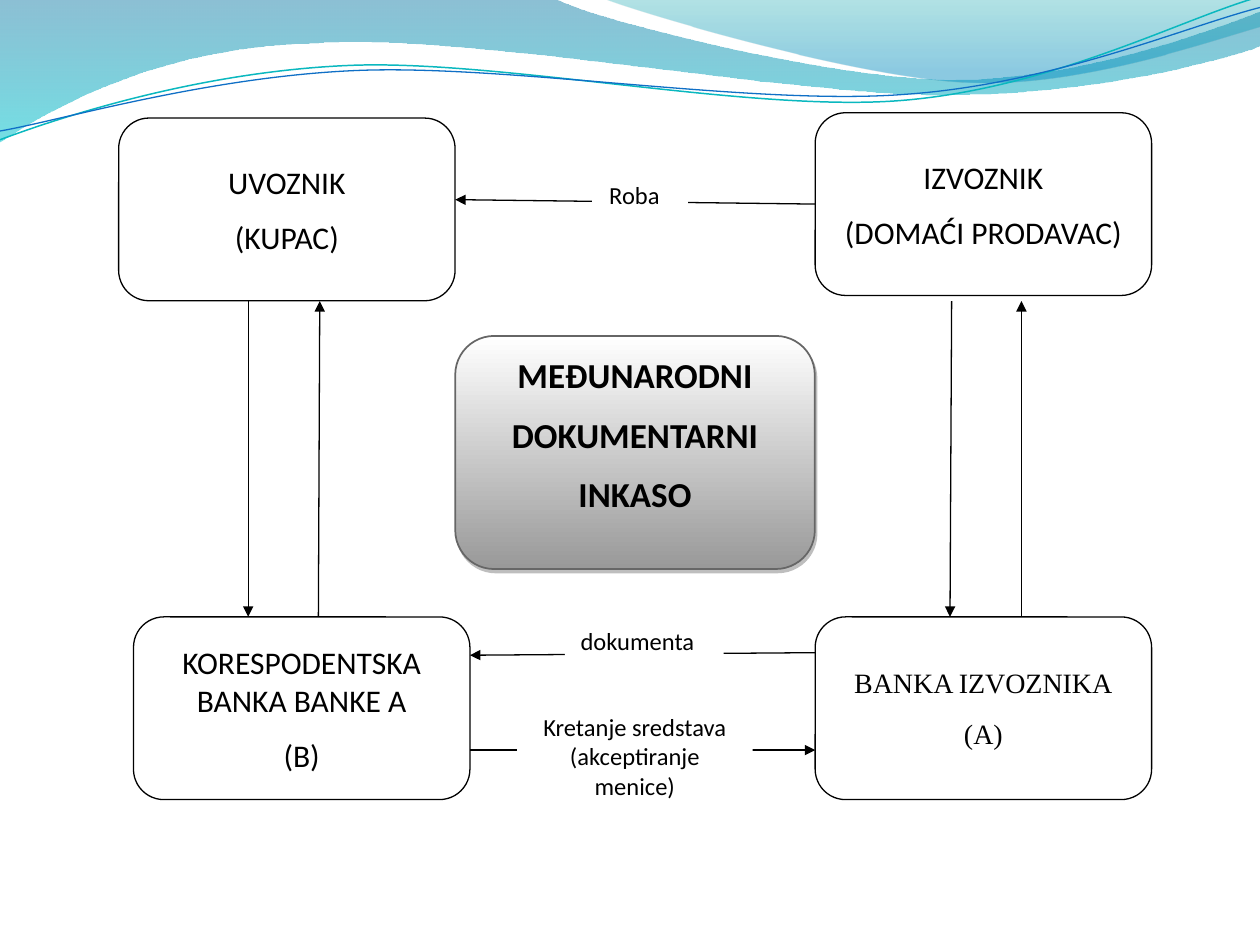
"""Build the slide on international documentary collection: parties, banks and flows."""
from math import cos, radians, sin
from lxml import etree
from pptx import Presentation
from pptx.dml.color import RGBColor
from pptx.enum.shapes import MSO_CONNECTOR, MSO_SHAPE
from pptx.enum.text import MSO_ANCHOR, PP_ALIGN
from pptx.oxml import parse_xml
from pptx.oxml.ns import nsdecls, qn
from pptx.util import Inches, Pt

ROUNDED, STRAIGHT = MSO_SHAPE.ROUNDED_RECTANGLE, MSO_CONNECTOR.STRAIGHT
CENTER, LEFT = PP_ALIGN.CENTER, PP_ALIGN.LEFT
MIDDLE, TOP = MSO_ANCHOR.MIDDLE, MSO_ANCHOR.TOP
COLORS = {
    "ink": "000000", "paper": "FFFFFF", "gray": "999999", "edge": "666666",
    "shade": "7F7F7F", "teal line": "0AB8BF", "blue line": "0F6FC6",
    "deep": "0074A1", "aqua": "00C6CF", "sea": "00A1A9", "sky": "008BBF",
}
RGB = {name: RGBColor.from_string(value) for name, value in COLORS.items()}
TILT = 2.7

prs = Presentation()
prs.slide_width, prs.slide_height = Inches(10), Inches(7.5)
COL, ROW = prs.slide_width / 100, prs.slide_height / 75
slide = prs.slides.add_slide(prs.slide_layouts[6])
shapes = slide.shapes


def apply_gradient(shape, stops):
    """Fill a shape from top to bottom with (position, color, opacity) stops."""
    marks = "".join(
        f'<a:gs pos="{pos * 1000}"><a:srgbClr val="{COLORS[color]}">'
        f'<a:alpha val="{opacity * 1000}"/></a:srgbClr></a:gs>'
        for pos, color, opacity in stops)
    shape.fill.background()
    no_fill = shape._element.spPr.find(qn("a:noFill"))
    no_fill.getparent().replace(no_fill, parse_xml(
        f'<a:gradFill {nsdecls("a")} rotWithShape="1"><a:gsLst>{marks}</a:gsLst>'
        '<a:lin ang="5400000" scaled="0"/></a:gradFill>'))


def add_panel(left, top, width, height, lines, align, anchor, font_format):
    """Add a white rounded panel with formatted paragraphs."""
    panel = shapes.add_shape(ROUNDED, round(left * COL), round(top * ROW),
                             round(width * COL), round(height * ROW))
    panel.shadow.inherit = False
    panel.fill.solid()
    panel.fill.fore_color.rgb = RGB["paper"]
    panel.line.fill.background()
    frame = panel.text_frame
    frame.word_wrap, frame.vertical_anchor = True, anchor
    frame.text = "\n".join(lines)
    for paragraph in frame.paragraphs:
        paragraph.alignment, paragraph.space_after = align, Pt(10)
        font = paragraph.runs[0].font
        font.color.rgb = RGB["ink"]
        for attribute, value in font_format.items():
            setattr(font, attribute, value)
    return panel


# start point, then segments: one point is a straight line, three a Bézier curve
waves = [
    ((0, 0), [[(44, -0.1)], [(47.6, 1.7), (66.4, 6.3), (75.8, 6.3)],
              [(85.3, 6.3), (95.8, 2.6), (100, 0.9)], [(100.1, 3.6)],
              [(98.3, 4.4), (87, 7.6), (74.6, 7.5)],
              [(62.2, 7.5), (38.2, 2.8), (25.7, 3.4)],
              [(12.9, 3.6), (4.6, 8.3), (-0.1, 11.3)]],
     [(0, "deep", 45), (100, "aqua", 55)], None),
    ((47.9, -0.1), [[(50.9, 1.1), (68.2, 6.2), (76.9, 6.5)],
                    [(85.6, 6.9), (96.1, 3.2), (100, 2.1)], [(100, 0)]],
     [(0, "sea", 30), (80, "sky", 45)], None),
    ((0, 11.1), [[(4.8, 9.3), (15.8, 5.7), (27.7, 5.2)],
                 [(39.5, 4.7), (59.3, 8.9), (71.3, 8)],
                 [(83.3, 7.1), (93.8, 1.5), (99.8, -0.2)]],
     None, ("teal line", 0.85)),
    ((0, 10.4), [[(4.7, 9.6), (16.4, 6.1), (28.3, 5.6)],
                 [(40.3, 5.1), (59.7, 8.4), (71.7, 7.5)],
                 [(83.6, 6.7), (94.1, 2.1), (100, 0.6)]],
     None, ("blue line", 0.75)),
]
for start, segments, stops, stroke in waves:
    outline = [start] + [point for segment in segments for point in segment]
    tilt = 0 if stops else TILT
    turn = radians(tilt)
    points = [(round((50 + (x - 50) * cos(turn) - (y - 5.8) * sin(turn)) * COL),
               round((5.8 + (x - 50) * sin(turn) + (y - 5.8) * cos(turn)) * ROW))
              for x, y in outline]
    builder = shapes.build_freeform(*points[0])
    builder.add_line_segments(points[1:], close=stops is not None)
    wave = builder.convert_to_shape()
    wave.rotation = -tilt
    wave.shadow.inherit = False
    steps = iter(list(wave._element.iter(qn("a:lnTo"))))
    for segment in segments:
        pieces = [next(steps) for _ in segment]
        if len(pieces) == 3:
            curve = etree.Element(qn("a:cubicBezTo"))
            pieces[0].addprevious(curve)
            for piece in pieces:
                curve.append(piece[0])
                piece.getparent().remove(piece)
    if stops:
        apply_gradient(wave, stops)
        wave.line.fill.background()
    else:
        wave.fill.background()
        wave.line.color.rgb, wave.line.width = RGB[stroke[0]], Pt(stroke[1])

calibri = {"name": "Calibri", "size": Pt(18)}
times = {"name": "Times New Roman", "size": Pt(16)}
label_format = {"name": "Calibri", "size": Pt(14)}
heading_format = {"name": "Calibri", "size": Pt(20), "bold": True}

parties = {}
for party, left, top, lines, font_format in [
    ("exporter bank", 64.7, 48.96, ["BANKA IZVOZNIKA", "(A)"], times),
    ("correspondent", 10.6, 48.96, ["KORESPODENTSKA BANKA BANKE A", "(B)"], calibri),
    ("importer", 9.42, 9.37, ["UVOZNIK", "(KUPAC)"], calibri),
    ("exporter", 64.7, 8.95, ["IZVOZNIK", "(DOMAĆI PRODAVAC)"], calibri),
]:
    parties[party] = add_panel(left, top, 26.7, 14.5, lines, CENTER, MIDDLE, font_format)
    parties[party].line.color.rgb = RGB["ink"]
    parties[party].line.width = Pt(0.75)

flows = [
    (64.7, 16.2, 36.13, 15.85, "exporter"),
    (64.7, 51.8, 37.3, 52, None),
    (75.53, 23.9, 75.4, 48.96, None),
    (25.27, 48.96, 25.38, 23.9, None),
    (81.07, 48.96, 81.07, 23.9, None),
    (19.7, 23.9, 19.7, 48.96, None),
    (37.3, 59.53, 64.7, 59.53, None),
]
for x1, y1, x2, y2, sender in flows:
    flow = shapes.add_connector(STRAIGHT, round(x1 * COL), round(y1 * ROW),
                                round(x2 * COL), round(y2 * ROW))
    if sender:
        flow.begin_connect(parties[sender], 1)
    flow.line.color.rgb, flow.line.width = RGB["ink"], Pt(0.75)
    etree.SubElement(flow.line._get_or_add_ln(), qn("a:tailEnd"), type="triangle")
    etree.SubElement(flow._element.spPr, qn("a:effectLst"))

for left, top, width, height, wording, align in [
    (47, 13.4, 7.6, 7.9, "Roba", LEFT),
    (44.84, 48.96, 12.6, 5.3, "dokumenta", LEFT),
    (41.04, 55.4, 18.7, 12.3, "Kretanje sredstava (akceptiranje menice)", CENTER),
]:
    add_panel(left, top, width, height, [wording], align, TOP, label_format)

heading = add_panel(36.13, 26.66, 28.54, 18.5, ["MEĐUNARODNI", "DOKUMENTARNI", "INKASO"],
                    CENTER, TOP, heading_format)
apply_gradient(heading, [(0, "paper", 100), (100, "gray", 100)])
heading.line.color.rgb, heading.line.width = RGB["edge"], Pt(1)
effects = heading._element.spPr.find(qn("a:effectLst"))
effects.append(parse_xml(
    f'<a:outerShdw {nsdecls("a")} blurRad="0" dist="{Pt(2.2)}" dir="{63 * 60000}" '
    f'algn="ctr" rotWithShape="0"><a:srgbClr val="{COLORS["shade"]}">'
    '<a:alpha val="50000"/></a:srgbClr></a:outerShdw>'))

prs.save("out.pptx")
